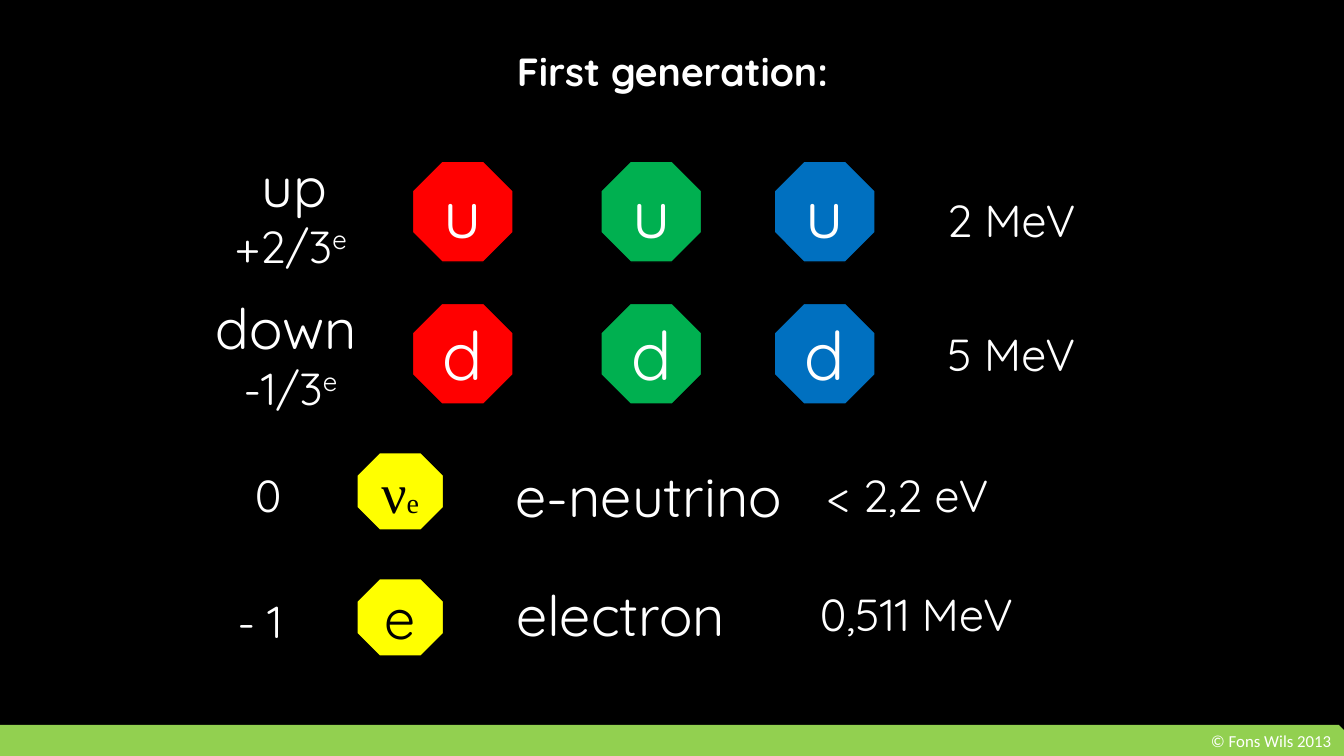
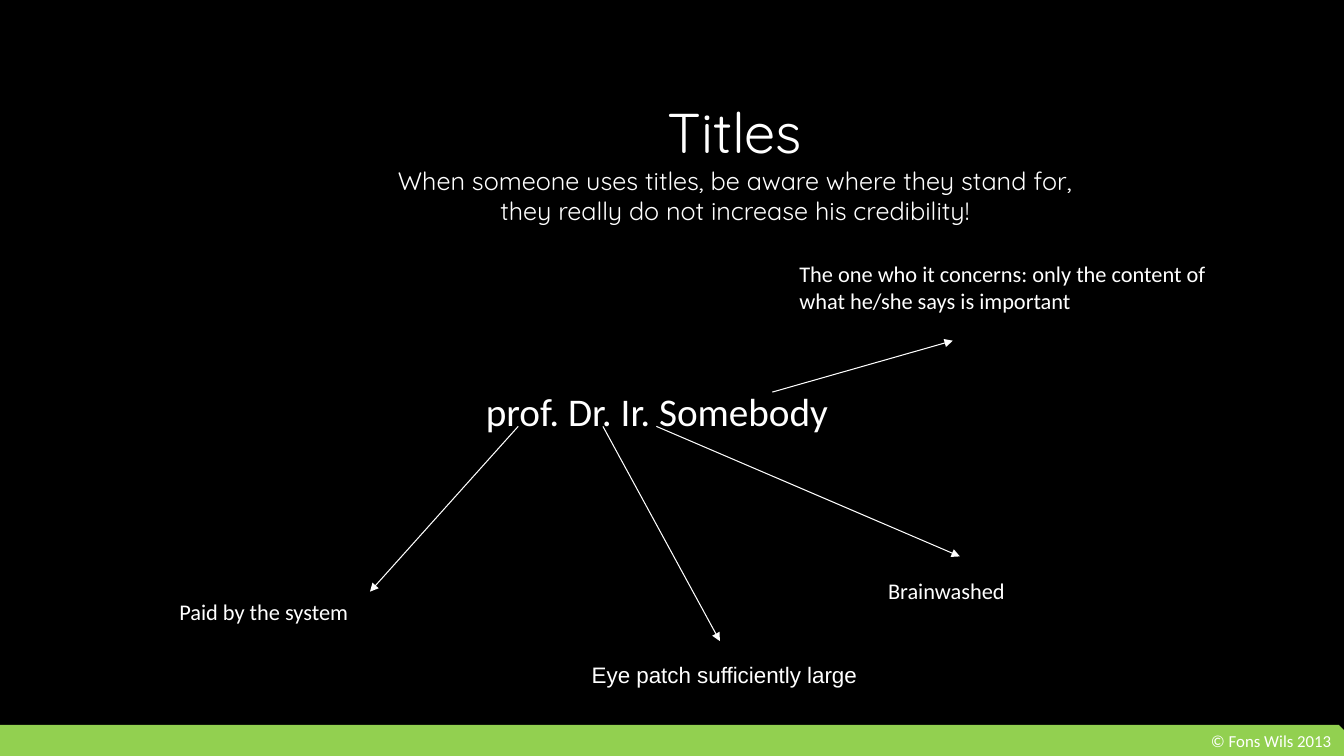
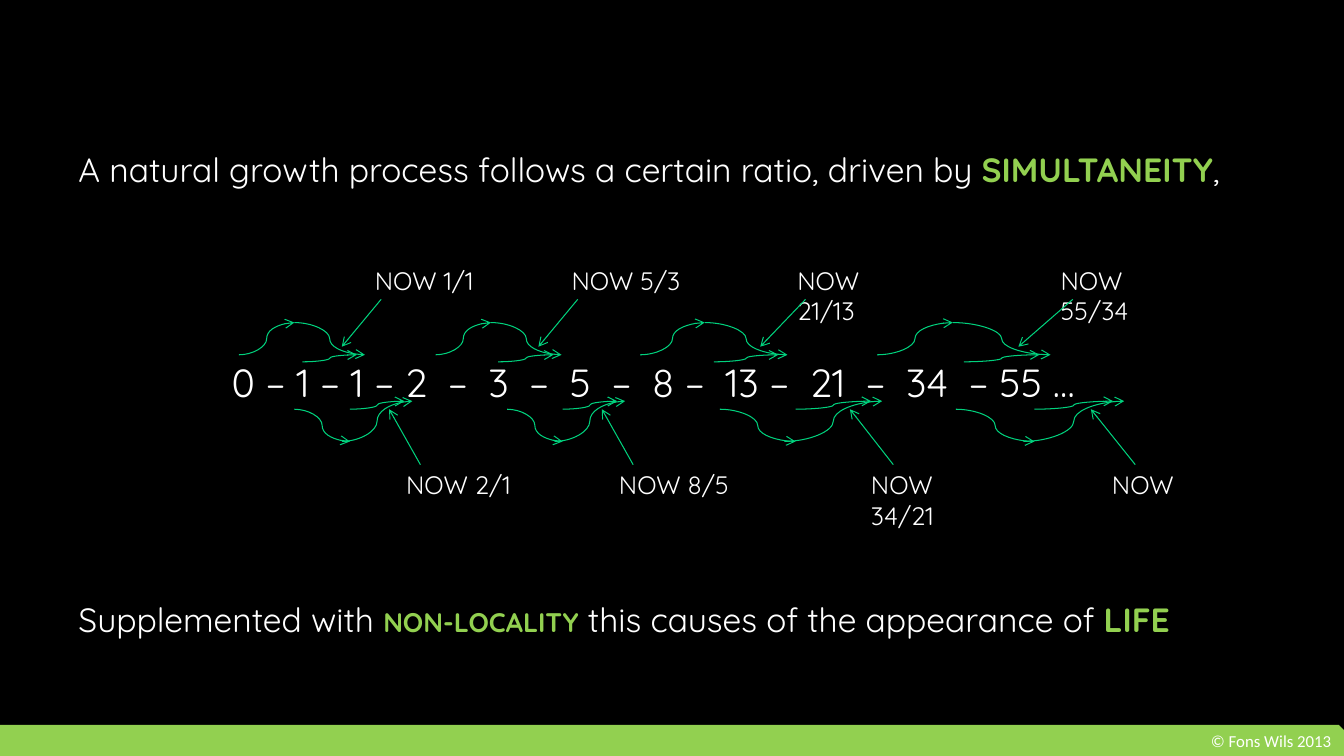
"""Build three black slides: first generation particles, titles, and natural growth."""
from dataclasses import dataclass
from typing import Any, NamedTuple, Sequence

from lxml import etree
from pptx import Presentation
from pptx.dml import color
from pptx.enum import shapes, text
from pptx.oxml import ns
from pptx.util import Emu, Pt

PX = 9144
RGB = color.RGBColor.from_string
ALIGN = text.PP_ALIGN
ANCHOR = text.MSO_ANCHOR
SHAPE = shapes.MSO_SHAPE
LINE = shapes.MSO_CONNECTOR


@dataclass(frozen=True)
class Theme:
    """Colours, fonts and type sizes shared by the slides."""
    black: color.RGBColor = RGB("000000")
    white: color.RGBColor = RGB("FFFFFF")
    lime: color.RGBColor = RGB("92D050")
    mint: color.RGBColor = RGB("01D17D")
    red: color.RGBColor = RGB("FF0000")
    green: color.RGBColor = RGB("00B050")
    blue: color.RGBColor = RGB("0070C0")
    yellow: color.RGBColor = RGB("FFFF00")
    display: str = "Quicksand"
    plain: str = "Calibri"
    sans: str = "Arial"
    serif: str = "Times New Roman"
    symbol: int = 48
    name: int = 40
    value: int = 32
    heading: int = 28
    body: int = 24
    small_symbol: int = 20
    label: int = 18
    note: int = 16
    footer: int = 12


THEME = Theme()


class Frame(NamedTuple):
    """A rectangle in px."""
    left: int
    top: int
    width: int
    height: int

    def emu(self) -> list[Emu]:
        """Return the four lengths in EMU."""
        return [Emu(length * PX) for length in self]


@dataclass(frozen=True)
class Run:
    """A stretch of text in one style."""
    words: str
    size: int
    font: str = THEME.display
    ink: color.RGBColor = THEME.white
    bold: bool = False
    extra: tuple[tuple[str, str], ...] = ()


Para = Sequence[Run]


class Tile(NamedTuple):
    """A filled shape with centred text."""
    frame: Frame
    paras: Sequence[Para]
    fill: color.RGBColor = THEME.black
    kind: Any = SHAPE.RECTANGLE


class Note(NamedTuple):
    """A free text label."""
    frame: Frame
    run: Run


class Arrow(NamedTuple):
    """A straight arrow between two points in px."""
    x1: int
    y1: int
    x2: int
    y2: int


class Hop(NamedTuple):
    """One growth step: its start, the reach of its curves, and its label."""
    start: int
    reach: int
    words: str
    label: Frame


class HopPattern(NamedTuple):
    """Arrows of a hop: x in sixteenths of its reach, y in px."""
    curves: tuple[Arrow, ...]
    pointer: Arrow


def write(frame: Any, paras: Sequence[Para], align: Any = ALIGN.LEFT,
          anchor: Any = ANCHOR.TOP, spacing: float = 1.0) -> None:
    """Fill a text frame run by run."""
    frame.word_wrap = True
    frame.vertical_anchor = anchor
    for index, runs in enumerate(paras):
        para = frame.add_paragraph() if index else frame.paragraphs[0]
        para.alignment = align
        para.line_spacing = spacing
        for run in runs:
            for number, line in enumerate(run.words.split("\n")):
                if number:
                    para.add_line_break()
                if not line:
                    continue
                span = para.add_run()
                span.text = line
                span.font.name = run.font
                span.font.size = Pt(run.size)
                span.font.bold = run.bold
                span.font.color.rgb = run.ink
                for key, setting in run.extra:
                    span._r.get_or_add_rPr().set(key, setting)


def add_text(page: Any, frame: Frame, paras: Sequence[Para],
             align: Any = ALIGN.LEFT, spacing: float = 1.0) -> Any:
    """Add a wrapped text box."""
    box = page.shapes.add_textbox(*frame.emu())
    write(box.text_frame, paras, align, spacing=spacing)
    return box


def add_filled(page: Any, kind: Any, frame: Frame, fill: color.RGBColor) -> Any:
    """Add a flat preset shape without outline."""
    shape = page.shapes.add_shape(kind, *frame.emu())
    shape.shadow.inherit = False
    shape.fill.solid()
    shape.fill.fore_color.rgb = fill
    shape.line.fill.background()
    return shape


def add_tile(page: Any, tile: Tile) -> None:
    """Add a black-edged shape with centred text."""
    shape = add_filled(page, tile.kind, tile.frame, tile.fill)
    shape.line.color.rgb = THEME.black
    shape.line.width = Pt(1)
    write(shape.text_frame, tile.paras, ALIGN.CENTER, ANCHOR.MIDDLE)


def add_arrow(page: Any, arrow: Arrow, ink: color.RGBColor, head: str,
              kind: Any = LINE.STRAIGHT) -> None:
    """Add a thin connector with an arrowhead at its end."""
    line = page.shapes.add_connector(kind, *[Emu(length * PX) for length in arrow])
    line.line.color.rgb = ink
    line.line.width = Pt(0.75)
    etree.SubElement(line.line._get_or_add_ln(), ns.qn("a:tailEnd"), type=head)
    etree.SubElement(line._element.spPr, ns.qn("a:effectLst"))


def add_page(deck: Any) -> Any:
    """Add a blank page with the footer band."""
    page = deck.slides.add_slide(deck.slide_layouts[6])
    band = add_filled(page, SHAPE.SNIP_1_RECTANGLE, Frame(0, 719, 1333, 31), THEME.lime)
    credit = Run("© Fons Wils 2013", THEME.footer, THEME.plain)
    write(band.text_frame, [[credit]], ALIGN.RIGHT, ANCHOR.MIDDLE, 0.9)
    return page


def caption(left: int, top: int, width: int, words: str, size: int) -> Tile:
    """Describe a one-line black caption."""
    return Tile(Frame(left, top, width, 100), [[Run(words, size)]])


def build_particles(deck: Any) -> None:
    """Build the first generation slide."""
    page = add_page(deck)
    heading = Run("First generation:", THEME.heading, bold=True)
    add_text(page, Frame(217, 47, 900, 641), [[heading]], ALIGN.CENTER, 0.9)
    columns = ((409, THEME.red), (596, THEME.green), (768, THEME.blue))
    quarks = [Tile(Frame(left, top, 100, 100), [[Run(letter, THEME.symbol)]],
                   fill, SHAPE.OCTAGON)
              for letter, top in (("u", 160), ("d", 301)) for left, fill in columns]
    neutrino = [Run("ν", THEME.name, THEME.serif, THEME.black),
                Run("e", THEME.small_symbol, THEME.serif, THEME.black)]
    electron = [Run("e", THEME.name, ink=THEME.black)]
    leptons = [Tile(Frame(354, top, 86, 77), [runs], THEME.yellow, SHAPE.OCTAGON)
               for top, runs in ((449, neutrino), (574, electron))]
    unit = Run("e ", THEME.value, extra=(("baseline", "30000"),))
    up = [[Run("up ", THEME.name), Run("+2/3", THEME.value), unit]]
    down = [[Run("down ", THEME.name)], [Run("-1/3", THEME.value), unit]]
    captions = [
        Tile(Frame(198, 160, 188, 100), up),
        Tile(Frame(182, 301, 219, 100), down),
        caption(464, 441, 359, "e-neutrino", THEME.name),
        caption(479, 559, 273, "electron", THEME.name),
        caption(917, 168, 172, "2 MeV", THEME.value),
        caption(917, 301, 172, "5 MeV", THEME.value),
        caption(799, 441, 203, "< 2,2 eV", THEME.value),
        caption(792, 559, 234, "0,511 MeV", THEME.value),
        caption(190, 566, 148, "- 1 ", THEME.value),
        caption(198, 441, 148, "0 ", THEME.value),
    ]
    for tile in quarks + leptons + captions:
        add_tile(page, tile)


def build_titles(deck: Any) -> None:
    """Build the slide about academic titles."""
    page = add_page(deck)
    title = [Run("Titles\n", THEME.name),
             Run("When someone uses titles, be aware where they stand for,\n"
                 "they really do not increase his credibility!", THEME.label)]
    add_text(page, Frame(178, 92, 1102, 138), [title], ALIGN.CENTER)
    concern = "The one who it concerns: only the content of what he/she says is important"
    notes = (
        Note(Frame(472, 379, 589, 91),
             Run("prof. Dr. Ir. Somebody", THEME.heading, THEME.plain)),
        Note(Frame(168, 588, 228, 49), Run("Paid by the system", THEME.note, THEME.plain)),
        Note(Frame(577, 651, 441, 47),
             Run("Eye patch sufficiently large", THEME.note, THEME.sans)),
        Note(Frame(871, 568, 267, 55), Run("Brainwashed", THEME.note, THEME.plain)),
        Note(Frame(783, 253, 435, 85), Run(concern, THEME.note, THEME.plain)),
    )
    for note in notes:
        add_text(page, note.frame, [[note.run]])
    for arrow in (Arrow(514, 423, 367, 587), Arrow(598, 423, 714, 636),
                  Arrow(651, 423, 952, 552), Arrow(766, 389, 945, 338)):
        add_arrow(page, arrow, THEME.white, "triangle")


ABOVE = HopPattern((Arrow(0, 352, 7, 320), Arrow(7, 320, 16, 352), Arrow(8, 359, 15, 352)),
                   Arrow(18, 297, 13, 344))
BELOW = HopPattern((Arrow(0, 406, 7, 438), Arrow(6, 438, 15, 398), Arrow(7, 406, 14, 398)),
                   Arrow(16, 461, 12, 406))
HOPS = (
    (ABOVE, (Hop(237, 125, "NOW 1/1", Frame(362, 258, 143, 40)),
             Hop(432, 125, "NOW 5/3", Frame(557, 258, 138, 40)),
             Hop(635, 146, "NOW 21/13", Frame(781, 258, 128, 71)),
             Hop(870, 172, "NOW 55/34", Frame(1042, 258, 125, 71)))),
    (BELOW, (Hop(292, 125, "NOW 2/1", Frame(393, 461, 147, 40)),
             Hop(503, 125, "NOW 8/5", Frame(604, 461, 138, 40)),
             Hop(714, 172, "NOW 34/21", Frame(854, 461, 133, 71)),
             Hop(948, 178, "NOW", Frame(1093, 461, 89, 40)))),
)
SERIES = ("0 – 1 – 1 – 2", "–", "3", "–", "5", "–", "8 –", "13 –", "21", "–", "34", "– 55 …")


def add_hop(page: Any, hop: Hop, pattern: HopPattern) -> None:
    """Draw the curves, pointer and label of one growth step."""
    def place(arrow: Arrow) -> Arrow:
        """Scale an arrow of the pattern to this hop."""
        x1, x2 = (round(hop.start + hop.reach * x / 16) for x in (arrow.x1, arrow.x2))
        return Arrow(x1, arrow.y1, x2, arrow.y2)

    for curve in pattern.curves:
        add_arrow(page, place(curve), THEME.mint, "arrow", LINE.CURVE)
    add_text(page, hop.label, [[Run(hop.words, THEME.label)]])
    add_arrow(page, place(pattern.pointer), THEME.mint, "arrow")


def build_growth(deck: Any) -> None:
    """Build the slide about natural growth."""
    page = add_page(deck)

    def plain(words: str) -> Run:
        """Return body text."""
        return Run(words, THEME.body)

    def strong(words: str, *extra: tuple[str, str]) -> Run:
        """Return highlighted body text."""
        return Run(words, THEME.body, ink=THEME.lime, bold=True, extra=extra)

    opening = [plain("A natural growth process follows a certain ratio, driven by "),
               strong("SIMULTANEITY"), plain(",")]
    closing = [plain("Supplemented with "), strong("non-locality", ("cap", "small")),
               plain(" this causes of the appearance of "), strong("LIFE")]
    body = add_text(page, Frame(68, 147, 1228, 575), [opening, closing], spacing=0.9)
    body.text_frame.paragraphs[1].space_before = Pt(296)

    wide_gap = Run(" ", THEME.heading, extra=(("spc", "700"),))
    numbers = [Run(SERIES[0], THEME.heading)]
    for piece in SERIES[1:]:
        numbers += [wide_gap, Run(piece, THEME.heading)]
    add_text(page, Frame(220, 351, 919, 104), [numbers])
    for pattern, hops in HOPS:
        for hop in hops:
            add_hop(page, hop, pattern)


def main() -> None:
    """Build and save the deck."""
    deck = Presentation()
    deck.slide_width, deck.slide_height = Emu(1333 * PX), Emu(750 * PX)
    backdrop = deck.slide_master.background.fill
    backdrop.solid()
    backdrop.fore_color.rgb = THEME.black
    build_particles(deck)
    build_titles(deck)
    build_growth(deck)
    deck.save("out.pptx")


if __name__ == "__main__":
    main()
